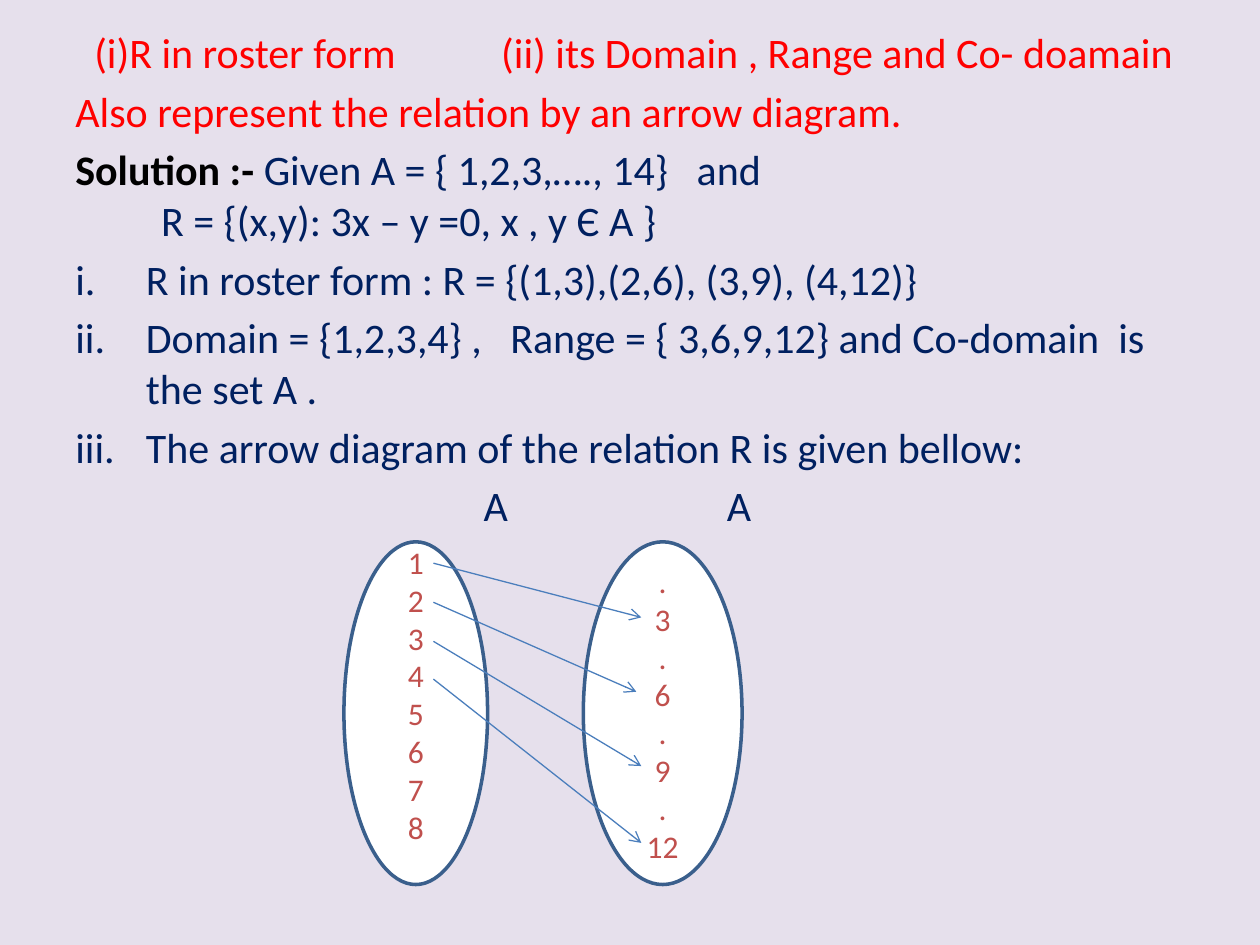
from lxml.etree import SubElement
from pptx import Presentation
from pptx.dml.color import RGBColor
from pptx.enum.shapes import MSO_CONNECTOR, MSO_SHAPE
from pptx.enum.text import MSO_ANCHOR, PP_ALIGN
from pptx.oxml.ns import qn
from pptx.util import Inches, Pt


def rgb(value):
    return RGBColor.from_string(value)


def add_text(p, text, size=24, color="002060", bold=False):
    r = p.add_run()
    r.text = text
    r.font.name = "Calibri"
    r.font.size = Pt(size)
    r.font.bold = bold
    r.font.color.rgb = rgb(color)


prs = Presentation()
prs.slide_width, prs.slide_height = Inches(10), Inches(7.5)
s = prs.slides.add_slide(prs.slide_layouts[6])
s.background.fill.solid()
s.background.fill.fore_color.rgb = rgb("E6E0EC")

RED = "FF0000"
lines = [
    ([("\t(i)R in roster form\t(ii) its Domain , Range and Co- doamain", RED, False)], [0.15, 3.38], False),
    ([("Also represent the relation by an arrow diagram.", RED, False)], [], False),
    ([("Solution :- ", "000000", True),
      ("Given A = { 1,2,3,…., 14}   and\v\tR = {(x,y): 3x – y =0, x , y Є A }", "002060", False)], [0.68], False),
    ([("R in roster form : R = {(1,3),(2,6), (3,9), (4,12)}", "002060", False)], [], True),
    ([("Domain = {1,2,3,4} ,   Range = { 3,6,9,12} and Co-domain  is the set A .", "002060", False)], [], True),
    ([("The arrow diagram of the relation R is given bellow:", "002060", False)], [], True),
    ([("\tA\tA", "002060", False)], [3.24, 5.17], False),
]
tf = s.shapes.add_textbox(Inches(0.5), Inches(0.16), Inches(9), Inches(7.2)).text_frame
tf.word_wrap = True
for i, (runs, stops, numbered) in enumerate(lines):
    p = tf.paragraphs[0] if i == 0 else tf.add_paragraph()
    p.space_before = Pt(4.8)
    for text, color, bold in runs:
        for j, part in enumerate(text.split("\v")):
            if j:
                p.add_line_break()
            add_text(p, part, color=color, bold=bold)
    pPr = p._p.get_or_add_pPr()
    if numbered:
        pPr.set("marL", str(Inches(0.56)))
        pPr.set("indent", str(Inches(-0.56)))
        SubElement(pPr, qn("a:buFont"), typeface="+mj-lt")
        SubElement(pPr, qn("a:buAutoNum"), type="romanLcPeriod")
    if stops:
        tabs = SubElement(pPr, qn("a:tabLst"))
        for stop in stops:
            SubElement(tabs, qn("a:tab"), pos=str(Inches(stop)), algn="l")

sets = [
    (2.73, 1.14, ["1", "2", "3", "4", "5", "6", "7", "8"], 0.35),
    (4.63, 1.26, [".", "3", ".", "6", ".", "9", ".", "12"], 0.05),
]
for left, width, members, bottom in sets:
    sp = s.shapes.add_shape(MSO_SHAPE.OVAL, Inches(left), Inches(4.3), Inches(width), Inches(2.72))
    sp.shadow.inherit = False
    sp.fill.solid()
    sp.fill.fore_color.rgb = rgb("FFFFFF")
    sp.line.color.rgb = rgb("3A5F8C")
    sp.line.width = Pt(2)
    tf = sp.text_frame
    tf.vertical_anchor = MSO_ANCHOR.MIDDLE
    tf.margin_bottom = Inches(bottom)
    for i, member in enumerate(members):
        p = tf.paragraphs[0] if i == 0 else tf.add_paragraph()
        p.alignment = PP_ALIGN.CENTER
        add_text(p, member, size=18, color="C0504D")

for y1, x2, y2 in [(4.78, 5.05, 5.49), (5.09, 5.09, 6.08), (5.39, 5.09, 6.69), (4.47, 5.09, 4.9)]:
    arrow = s.shapes.add_connector(MSO_CONNECTOR.STRAIGHT, Inches(3.44), Inches(y1), Inches(x2), Inches(y2))
    arrow.line.color.rgb = rgb("4B7EBC")
    arrow.line.width = Pt(0.75)
    SubElement(arrow.line._get_or_add_ln(), qn("a:tailEnd"), type="arrow")
    SubElement(arrow._element.spPr, qn("a:effectLst"))

prs.save("out.pptx")
